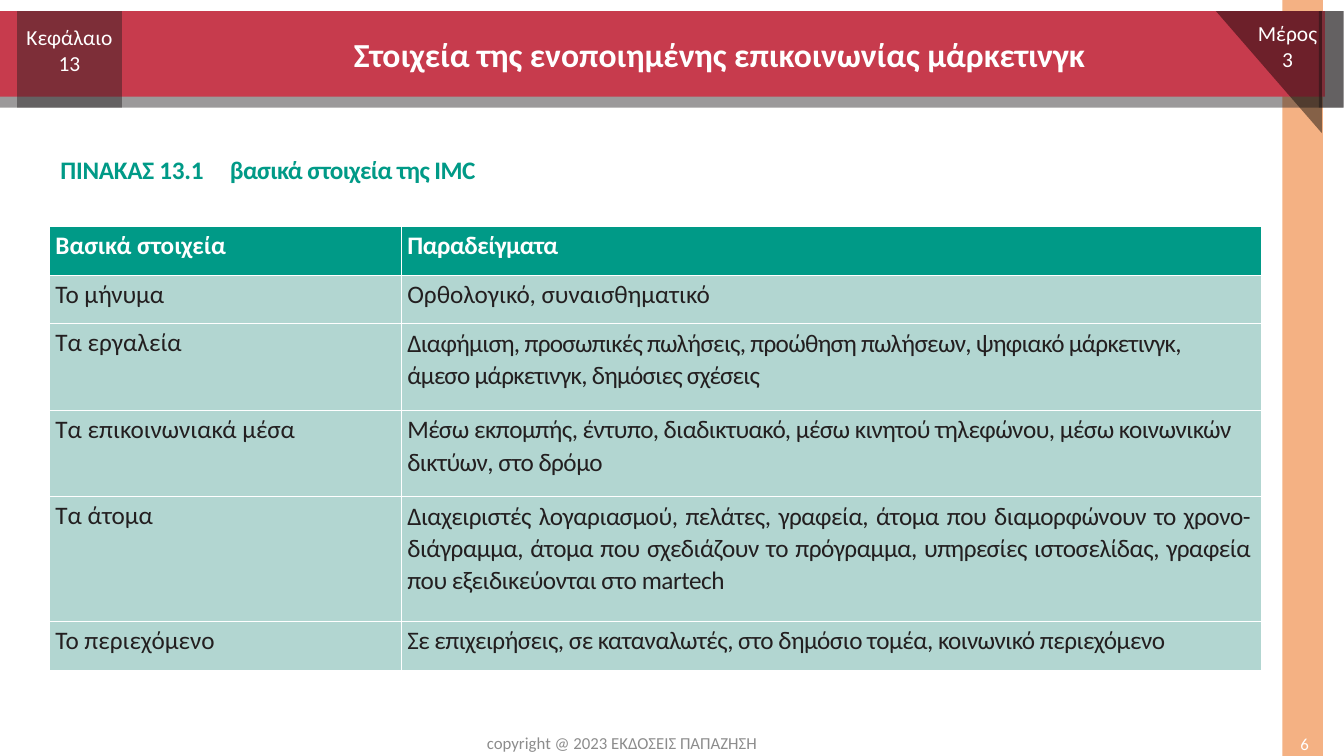
from lxml import etree
from pptx import Presentation
from pptx import util as u
from pptx.dml.color import RGBColor
from pptx.enum import shapes, text
from pptx.oxml.ns import qn

PX = 9144  # 100 px to the inch
COLORS = {
    "white": "FFFFFF", "black": "000000", "ink": "231F20", "red": "C73B4D",
    "orange": "F4B183", "teal": "009A87", "mint": "B2D6D1", "grey": "8C8C8C",
}
ALIGN = text.PP_ALIGN
MIDDLE = text.MSO_ANCHOR.MIDDLE


def style(para, size, color, bold=False, spacing=0):
    """Format every run; spacing is in hundredths of a point."""
    for span in para.runs:
        span.font.name = "Calibri"
        span.font.size = u.Pt(size)
        span.font.bold = bold
        span.font.color.rgb = RGBColor.from_string(COLORS[color])
        if spacing:
            span.font._element.set("spc", str(spacing))


deck = Presentation()
deck.slide_width, deck.slide_height = 1333 * PX, 750 * PX
page = deck.slides.add_slide(deck.slide_layouts[6])

# Bands and labels, from back to front
RECT = shapes.MSO_SHAPE.RECTANGLE
TRIANGLE = shapes.MSO_SHAPE.RIGHT_TRIANGLE
bands = [
    (RECT, 1272, 0, 40, 750, "orange", 100),
    (RECT, 0, 11, 1332, 96, "ink", 45),
    (RECT, 0, 11, 1314, 85, "red", 100),
    (RECT, 1308, 11, 25, 96, "ink", 45),
    (RECT, 17, 11, 104, 96, "ink", 45),
    (TRIANGLE, 1206, 11, 105, 121, "black", 45),
]
for kind, left, top, width, height, color, opacity in bands:
    band = page.shapes.add_shape(kind, left * PX, top * PX, width * PX, height * PX)
    band.shadow.inherit = False
    band.line.fill.background()
    band.fill.solid()
    band.fill.fore_color.rgb = RGBColor.from_string(COLORS[color])
    if kind == TRIANGLE:
        band.rotation = 180
    if opacity < 100:
        fill_color = band._element.spPr.find(".//" + qn("a:srgbClr"))
        etree.SubElement(fill_color, qn("a:alpha")).set("val", str(opacity * 1000))

labels = [
    ("Στοιχεία της ενοποιημένης επικοινωνίας μάρκετινγκ",
     139, 11, 1149, 85, 24, "white", True, ALIGN.CENTER, MIDDLE),
    ("copyright @ 2023 ΕΚΔΟΣΕΙΣ ΠΑΠΑΖΗΣΗ",
     359, 722, 516, 30, 12, "grey", False, ALIGN.CENTER, MIDDLE),
    ("6", 1164, 726, 144, 23, 12, "white", False, ALIGN.RIGHT, MIDDLE),
    ("Κεφάλαιο\n13", 1, 19, 136, 62, 15.3, "white", False, ALIGN.CENTER, None),
    ("Μέρος\n3", 1209, 15, 136, 62, 15.3, "white", False, ALIGN.CENTER, None),
]
for words, left, top, width, height, size, color, bold, align, anchor in labels:
    box = page.shapes.add_textbox(left * PX, top * PX, width * PX, height * PX)
    frame = box.text_frame
    frame.word_wrap = True
    frame.text = words
    if anchor is not None:
        frame.vertical_anchor = anchor
    for para in frame.paragraphs:
        para.alignment = align
        style(para, size, color, bold)

# Table caption
caption = page.shapes.add_textbox(49 * PX, 148 * PX, 672 * PX, 40 * PX).text_frame
caption.word_wrap = True
caption.margin_left = 11 * PX
para = caption.paragraphs[0]
tabs = etree.SubElement(para._p.get_or_add_pPr(), qn("a:tabLst"))
etree.SubElement(tabs, qn("a:tab"), pos=str(168 * PX), algn="l")
para.add_run().text = "ΠΙΝΑΚΑΣ 13.1\t"
para.add_run().text = "βασικά στοιχεία της IMC"
style(para, 18, "teal", True, -40)
para.runs[0].font._element.set("spc", "-20")

# Table: label, examples, row height, letter spacing, right inset, alignment
rows = [
    ("Βασικά στοιχεία", "Παραδείγματα", 48, -30, 0, ALIGN.LEFT),
    ("Το μήνυμα", "Ορθολογικό, συναισθηματικό", 48, 0, 0, ALIGN.LEFT),
    ("Τα εργαλεία",
     "Διαφήμιση, προσωπικές πωλήσεις, προώθηση πωλήσεων, ψηφιακό μάρκετινγκ, "
     "άμεσο μάρκετινγκ, δημόσιες σχέσεις", 86, -50, 30, ALIGN.LEFT),
    ("Τα επικοινωνιακά μέσα",
     "Μέσω εκπομπής, έντυπο, διαδικτυακό, μέσω κινητού τηλεφώνου, "
     "μέσω κοινωνικών δικτύων, στο δρόμο", 86, -38, 11, ALIGN.LEFT),
    ("Τα άτομα",
     "Διαχειριστές λογαριασμού, πελάτες, γραφεία, άτομα που διαμορφώνουν το "
     "χρονο- διάγραμμα, άτομα που σχεδιάζουν το πρόγραμμα, υπηρεσίες "
     "ιστοσελίδας, γραφεία που εξειδικεύονται στο martech",
     124, -33, 11, ALIGN.JUSTIFY),
    ("Το περιεχόμενο",
     "Σε επιχειρήσεις, σε καταναλωτές, στο δημόσιο τομέα, κοινωνικό περιεχόμενο",
     48, -36, 0, ALIGN.LEFT),
]
table = page.shapes.add_table(
    len(rows), 2, 49 * PX, 225 * PX, 1202 * PX, 440 * PX).table
table.horz_banding = False
for column, width in zip(table.columns, (349, 853)):
    column.width = width * PX

for row, (label, examples, height, spacing, inset, align) in enumerate(rows):
    table.rows[row].height = height * PX
    header = row == 0
    for col, words in enumerate((label, examples)):
        cell = table.cell(row, col)
        cell.margin_left, cell.margin_top = 6 * PX, 4 * PX
        cell.margin_right, cell.margin_bottom = inset * col * PX, 0
        cell.text = words
        para = cell.text_frame.paragraphs[0]
        if col:
            para.alignment = align
        if height > 48 and col:
            para.line_spacing = 1.05
            cell.margin_top = 3 * PX
        style(para, 18, "white" if header else "ink", header, spacing * col)
        for side in ("lnL", "lnR", "lnT", "lnB"):
            border = etree.SubElement(cell._tc.get_or_add_tcPr(), qn("a:" + side))
            border.set("w", str(u.Pt(0.75)))
            stroke = etree.SubElement(border, qn("a:solidFill"))
            etree.SubElement(stroke, qn("a:srgbClr")).set("val", COLORS["white"])
        cell.fill.solid()
        cell.fill.fore_color.rgb = RGBColor.from_string(
            COLORS["teal" if header else "mint"])

deck.save("out.pptx")
